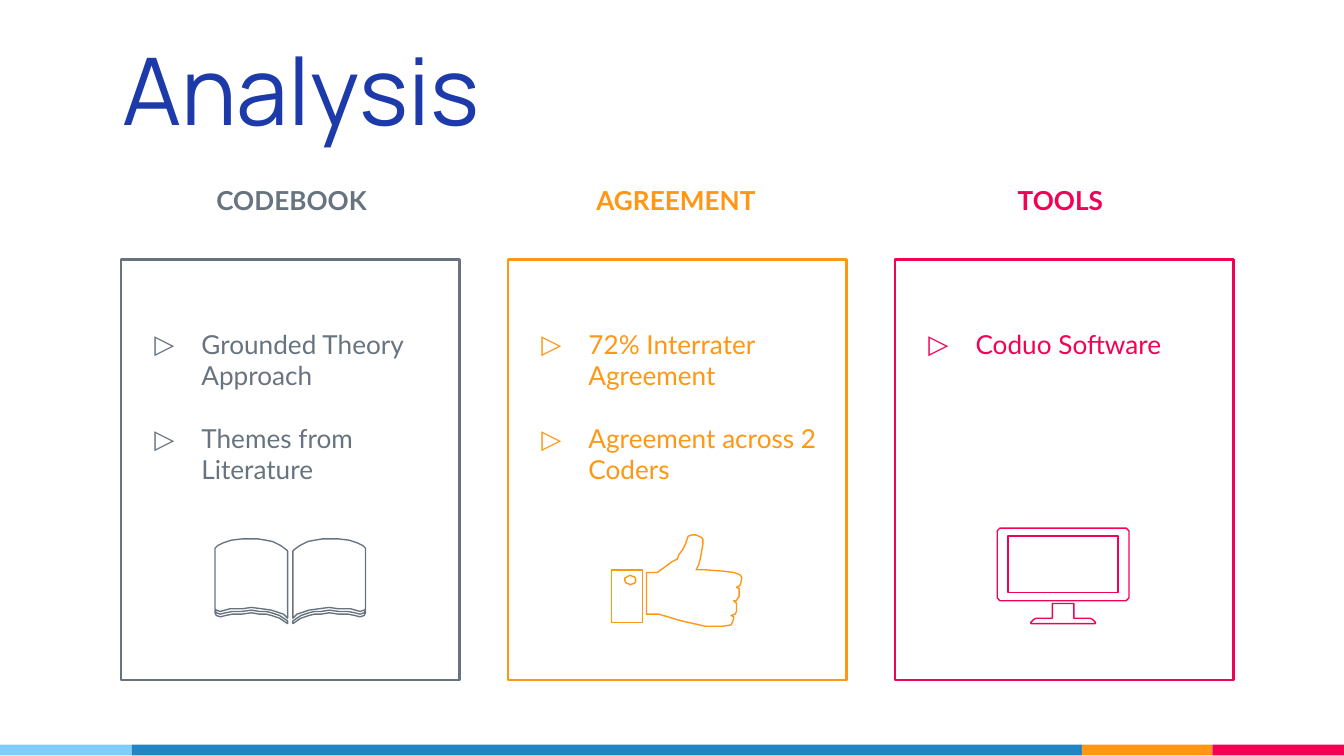
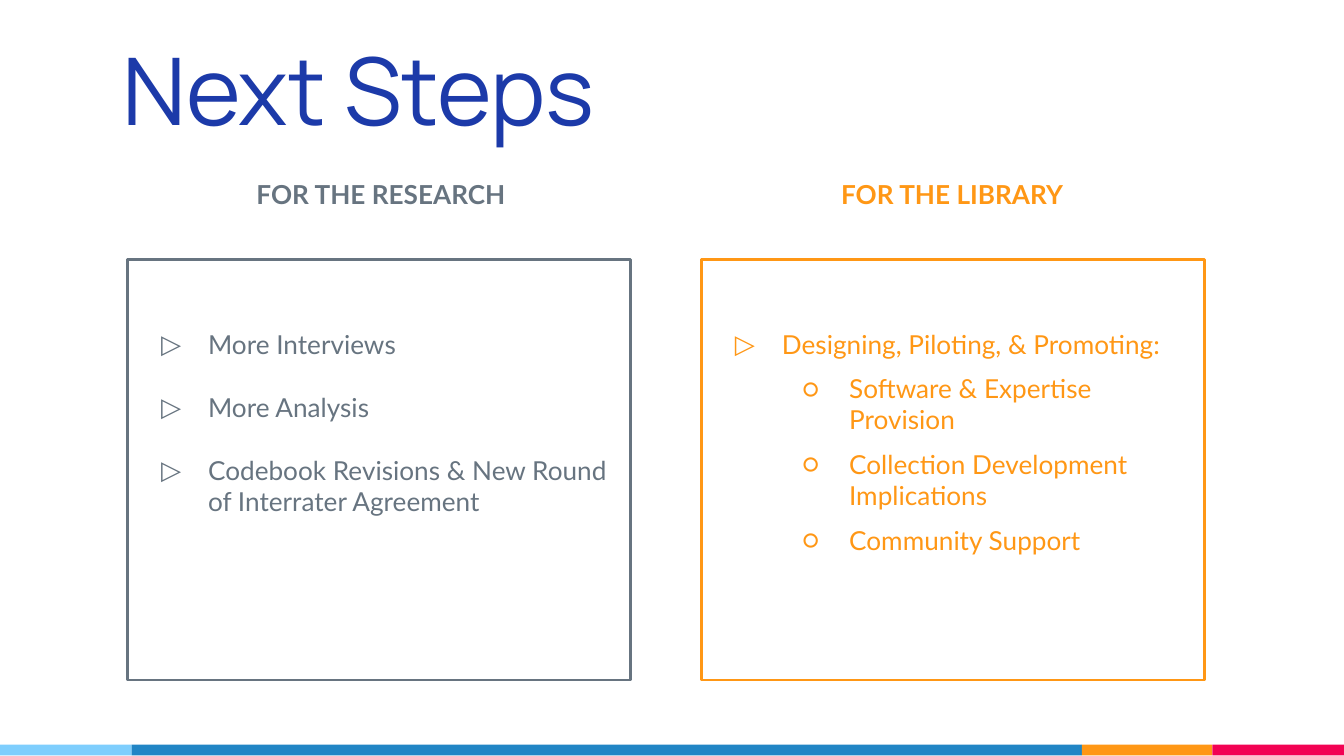
from dataclasses import dataclass
from typing import NamedTuple

from lxml.etree import SubElement
from pptx import Presentation
from pptx.dml.color import RGBColor
from pptx.enum.shapes import MSO_SHAPE
from pptx.enum.text import MSO_ANCHOR, MSO_AUTO_SIZE, PP_ALIGN
from pptx.oxml.ns import qn
from pptx.util import Pt

PX = 9144
Points = list[tuple[int, int]]


@dataclass(frozen=True)
class Theme:
    title: str = "1C3AA9"
    slate: str = "677480"
    orange: str = "FF9715"
    pink: str = "F20253"
    sky: str = "7ECEFD"
    blue: str = "2185C5"
    title_font: str = "Manrope"
    body_font: str = "Lato"
    title_size: int = 50
    body_size: int = 14
    frame_line: float = 1.5
    icon_line: float = 0.75


class Box(NamedTuple):
    x: int
    y: int
    w: int
    h: int

    def emu(self) -> list[int]:
        return [v * PX for v in self]


class Item(NamedTuple):
    text: str
    level: int = 0


class Bullet(NamedTuple):
    char: str
    indent: int
    gap: int


class Outline(NamedTuple):
    contours: list[Points]


class Columns(NamedTuple):
    left: int
    width: int
    pitch: int

    def box(self, index: int, top: int, height: int) -> Box:
        return Box(self.left + index * self.pitch, top, self.width, height)


@dataclass(frozen=True)
class Card:
    heading: str
    color: str
    items: list[Item]
    icon: tuple[Outline, ...] = ()


@dataclass(frozen=True)
class CardRow:
    frames: Columns
    headings: Columns
    heading_top: int


T = Theme()
SLIDE_W = 1000
INSET, HANGING = 10, 35
TITLE = Box(81, 23, 707, 94)
FRAME_TOP, FRAME_H = 193, 313
BODY_TOP, BODY_H = 234, 232
HEADING_H = 94
BAND_TOP, BAND_H = 554, 8
BANDS = [(98, T.sky), (707, T.blue), (97, T.orange), (98, T.pink)]
BULLETS = [Bullet("▷", 50, 17), Bullet("○", 100, 7)]


def mirror(points: Points, axis: int) -> Points:
    return [(2 * axis - x, y) for x, y in reversed(points)]


def book() -> tuple[Outline, ...]:
    page = [
        (187, 401), (180, 401), (172, 402), (166, 404), (162, 406), (160, 408),
        (160, 453), (161, 454), (164, 455), (171, 453), (180, 453), (187, 452),
        (195, 453), (202, 454), (208, 456), (211, 457), (214, 460), (214, 410),
        (213, 409), (209, 406), (203, 403), (198, 402), (192, 401),
    ]
    edge = [
        (160, 454), (161, 456), (164, 457), (168, 456), (173, 455), (180, 455),
        (187, 454), (193, 455), (198, 455), (202, 456), (208, 458), (211, 460),
        (214, 462),
    ]
    under = [(x, y + 2) for x, y in reversed(edge)]
    halves = [edge + under, page]
    return tuple(
        Outline([half])
        for points in halves
        for half in (points, mirror(points, 216))
    )


def thumb() -> tuple[Outline, ...]:
    button = [
        (469, 428), (471, 429), (472, 429), (473, 431), (473, 433), (472, 434),
        (469, 435), (467, 434), (466, 434), (465, 432), (465, 430), (467, 429),
    ]
    cuff = [(455, 424), (455, 463), (478, 463), (478, 424)]
    hand = [
        (518, 398), (515, 398), (512, 399), (510, 405), (508, 409), (505, 413),
        (504, 416), (500, 418), (496, 421), (489, 426), (481, 426), (481, 457),
        (490, 457), (497, 459), (507, 462), (516, 464), (525, 466), (538, 466),
        (544, 465), (545, 463), (546, 460), (546, 459), (544, 458), (547, 457),
        (548, 455), (548, 451), (548, 449), (546, 447), (548, 447), (549, 445),
        (550, 444), (550, 440), (550, 438), (548, 437), (550, 436), (551, 435),
        (552, 430), (551, 428), (549, 427), (546, 426), (538, 425), (525, 424),
        (518, 424), (520, 420), (521, 416), (522, 411), (523, 405), (523, 401),
        (522, 400), (520, 399),
    ]
    return Outline([button, cuff]), Outline([hand])


def monitor() -> tuple[Outline, ...]:
    stand = [(783, 449), (783, 460), (771, 460), (769, 461), (767, 463), (767, 464)]
    case = [(744, 393), (742, 395), (742, 445), (744, 447)]
    screen = [(750, 399), (750, 441)]
    whole = [half + mirror(half, 791) for half in (stand, screen, case)]
    return Outline(whole[:1]), Outline(whole[1:])


def rgb(color: str) -> RGBColor:
    return RGBColor.from_string(color)


def style_runs(p, font: str, size: int, color: str, bold: bool = False) -> None:
    for r in p.runs:
        r.font.name = font
        r.font.size = Pt(size)
        r.font.bold = bold
        r.font.color.rgb = rgb(color)


def set_frame(tf, anchor: MSO_ANCHOR) -> None:
    tf.word_wrap = True
    tf.auto_size = MSO_AUTO_SIZE.NONE
    tf.vertical_anchor = anchor
    tf.margin_left = tf.margin_right = INSET * PX
    tf.margin_top = tf.margin_bottom = INSET * PX


def set_outline(sp, color: str, width: float) -> None:
    sp.shadow.inherit = False
    sp.fill.background()
    sp.line.color.rgb = rgb(color)
    sp.line.width = Pt(width)


def add_bullet(p, bullet: Bullet, color: str) -> None:
    pPr = p._p.get_or_add_pPr()
    pPr.set("marL", str(bullet.indent * PX))
    pPr.set("indent", str(-HANGING * PX))
    SubElement(SubElement(pPr, qn("a:buClr")), qn("a:srgbClr")).set("val", color)
    SubElement(pPr, qn("a:buFont")).set("typeface", T.body_font)
    SubElement(pPr, qn("a:buChar")).set("char", bullet.char)


def add_bands(s) -> None:
    x = 0
    for width, color in BANDS:
        box = Box(x, BAND_TOP, width, BAND_H)
        sp = s.shapes.add_shape(MSO_SHAPE.RECTANGLE, *box.emu())
        sp.shadow.inherit = False
        sp.fill.solid()
        sp.fill.fore_color.rgb = rgb(color)
        sp.line.fill.background()
        x += width


def add_title(s, text: str) -> None:
    sp = s.shapes.title
    sp.left, sp.top, sp.width, sp.height = TITLE.emu()
    tf = sp.text_frame
    set_frame(tf, MSO_ANCHOR.BOTTOM)
    tf.text = text
    p = tf.paragraphs[0]
    p.alignment = PP_ALIGN.LEFT
    style_runs(p, T.title_font, T.title_size, T.title)


def add_heading(s, box: Box, card: Card) -> None:
    tf = s.shapes.add_textbox(*box.emu()).text_frame
    set_frame(tf, MSO_ANCHOR.TOP)
    tf.text = card.heading
    p = tf.paragraphs[0]
    p.alignment = PP_ALIGN.CENTER
    style_runs(p, T.body_font, T.body_size, card.color, bold=True)


def add_items(s, box: Box, card: Card) -> None:
    tf = s.shapes.add_textbox(*box.emu()).text_frame
    set_frame(tf, MSO_ANCHOR.TOP)
    for i, item in enumerate(card.items):
        p = tf.add_paragraph() if i else tf.paragraphs[0]
        bullet = BULLETS[item.level]
        p.text = item.text
        p.level = item.level
        add_bullet(p, bullet, card.color)
        if i:
            p.space_before = Pt(bullet.gap)
        style_runs(p, T.body_font, T.body_size, card.color)


def add_icon(s, card: Card) -> None:
    group = s.shapes.add_group_shape()
    for outline in card.icon:
        first, *rest = outline.contours
        fb = group.shapes.build_freeform(*first[0], scale=PX)
        fb.add_line_segments(first[1:], close=True)
        for points in rest:
            fb.move_to(*points[0])
            fb.add_line_segments(points[1:], close=True)
        set_outline(fb.convert_to_shape(), card.color, T.icon_line)


def add_card(s, row: CardRow, index: int, card: Card) -> None:
    frame = row.frames.box(index, FRAME_TOP, FRAME_H)
    sp = s.shapes.add_shape(MSO_SHAPE.RECTANGLE, *frame.emu())
    set_outline(sp, card.color, T.frame_line)
    add_items(s, row.frames.box(index, BODY_TOP, BODY_H), card)
    add_heading(s, row.headings.box(index, row.heading_top, HEADING_H), card)
    if card.icon:
        add_icon(s, card)


def add_slide(prs, title: str, row: CardRow, cards: list[Card]) -> None:
    s = prs.slides.add_slide(prs.slide_layouts.get_by_name("Title Only"))
    add_bands(s)
    add_title(s, title)
    for i, card in enumerate(cards):
        add_card(s, row, i, card)


def main() -> None:
    prs = Presentation()
    prs.slide_width = SLIDE_W * PX
    prs.slide_height = SLIDE_W * PX * 9 // 16
    thirds = CardRow(Columns(90, 252, 288), Columns(81, 272, 286), 127)
    add_slide(prs, "Analysis", thirds, [
        Card("CODEBOOK", T.slate, [
            Item("Grounded Theory Approach"),
            Item("Themes from Literature"),
        ], book()),
        Card("AGREEMENT", T.orange, [
            Item("72% Interrater Agreement"),
            Item("Agreement across 2 Coders"),
        ], thumb()),
        Card("TOOLS", T.pink, [Item("Coduo Software")], monitor()),
    ])
    halves = CardRow(Columns(95, 374, 427), Columns(81, 405, 425), 123)
    add_slide(prs, "Next Steps", halves, [
        Card("FOR THE RESEARCH", T.slate, [
            Item("More Interviews"),
            Item("More Analysis"),
            Item("Codebook Revisions & New Round of Interrater Agreement"),
        ]),
        Card("FOR THE LIBRARY", T.orange, [
            Item("Designing, Piloting, & Promoting:"),
            Item("Software & Expertise Provision", 1),
            Item("Collection Development Implications", 1),
            Item("Community Support", 1),
        ]),
    ])
    prs.save("out.pptx")


if __name__ == "__main__":
    main()
